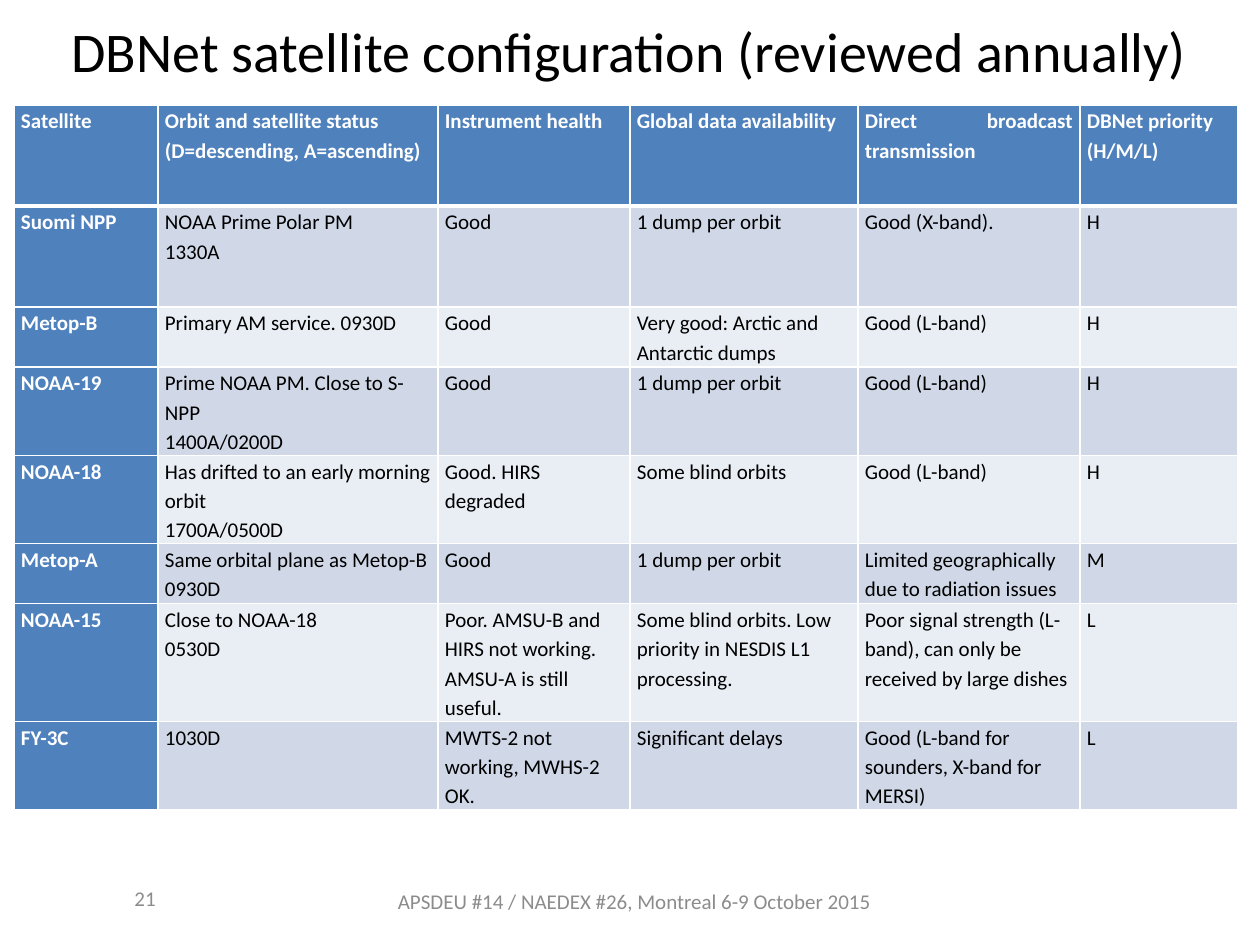
"""Build the DBNet satellite configuration slide."""
from dataclasses import dataclass
from typing import Any, NamedTuple

from lxml.etree import SubElement
from pptx import Presentation
from pptx.dml.color import RGBColor as RGB
from pptx.enum.text import MSO_ANCHOR as Anchor, PP_ALIGN as Align
from pptx.oxml.ns import qn
from pptx.util import Emu, Pt

SCALE = 914400 / 126


@dataclass(frozen=True)
class Theme:
    """Colours, font and type sizes of the slide."""
    font: str = "Calibri"
    title_size: int = 32
    text_size: int = 12
    spacing: float = 1.15
    black: str = "000000"
    white: str = "FFFFFF"
    grey: str = "8C8C8C"
    blue: str = "4F81BD"
    bands: tuple[str, str] = ("D0D8E8", "E9EDF4")


class Box(NamedTuple):
    """Position and size in px."""
    left: int
    top: int
    width: int
    height: int


class Label(NamedTuple):
    """A footer text."""
    text: str
    box: Box
    align: Align


THEME = Theme()
TITLE = "DBNet satellite configuration (reviewed annually)"
TITLE_BOX = Box(55, 5, 1149, 91)
TABLE_BOX = Box(14, 105, 1224, 625)
COLS = (144, 280, 192, 228, 222, 158)
ROW_HEIGHTS = (101, 101, 60, 81, 60, 60, 101, 60)
LEFT_HEADER = 3
ROWS = (
    ("Satellite", "Orbit and satellite status\n(D=descending, A=ascending)",
     "Instrument health", "Global data availability",
     "Direct broadcast transmission", "DBNet priority\n(H/M/L)"),
    ("Suomi NPP", "NOAA Prime Polar PM\n1330A", "Good", "1 dump per orbit",
     "Good (X-band).", "H"),
    ("Metop-B", "Primary AM service. 0930D", "Good",
     "Very good: Arctic and Antarctic dumps", "Good (L-band)", "H"),
    ("NOAA-19", "Prime NOAA PM. Close to S-NPP\n1400A/0200D", "Good",
     "1 dump per orbit", "Good (L-band)", "H"),
    ("NOAA-18", "Has drifted to an early morning orbit\n1700A/0500D",
     "Good. HIRS degraded", "Some blind orbits", "Good (L-band)", "H"),
    ("Metop-A", "Same orbital plane as Metop-B\n0930D", "Good",
     "1 dump per orbit", "Limited geographically due to radiation issues", "M"),
    ("NOAA-15", "Close to NOAA-18\n0530D",
     "Poor. AMSU-B and HIRS not working. AMSU-A is still useful.",
     "Some blind orbits. Low priority in NESDIS L1 processing.",
     "Poor signal strength (L-band), can only be received by large dishes", "L"),
    ("FY-3C", "1030D", "MWTS-2 not working, MWHS-2 OK.", "Significant delays",
     "Good (L-band for sounders, X-band for MERSI)", "L"),
)
FOOTERS = (
    Label("APSDEU #14 / NAEDEX #26, Montreal 6-9 October 2015",
          Box(372, 876, 525, 50), Align.CENTER),
    Label("21", Box(62, 873, 106, 50), Align.RIGHT),
)


def px(n: int) -> Emu:
    """Turn px into EMU."""
    return Emu(round(n * SCALE))


def assign(obj: Any, values: dict[str, Any]) -> None:
    """Set attributes from a dict."""
    for name, value in values.items():
        setattr(obj, name, value)


def write(tf: Any, text: str, size: int, color: str, align: Align,
          bold: bool = False, spacing: float | None = None) -> None:
    """Fill a text frame with one paragraph per line."""
    tf.text = text
    for p in tf.paragraphs:
        assign(p, {"alignment": align, "line_spacing": spacing})
        for r in p.runs:
            assign(r.font, {"name": THEME.font, "size": Pt(size), "bold": bold})
            r.font.color.rgb = RGB.from_string(color)


def add_borders(cell: Any, top: int, bottom: int) -> None:
    """Draw white cell borders with widths in points."""
    pr = cell._tc.get_or_add_tcPr()
    for side, width in {"L": 1, "R": 1, "T": top, "B": bottom}.items():
        ln = SubElement(pr, qn(f"a:ln{side}"), w=str(Pt(width)))
        SubElement(SubElement(ln, qn("a:solidFill")), qn("a:srgbClr"), val=THEME.white)


def format_cell(cell: Any, text: str, row: int, col: int) -> None:
    """Write and colour one table cell by its place in the grid."""
    head = row == 0 or col == 0
    align = Align.JUSTIFY if row == 0 and col != LEFT_HEADER else Align.LEFT
    assign(cell, {"margin_left": px(7), "margin_right": px(7),
                  "margin_top": 0, "margin_bottom": 0})
    write(cell.text_frame, text, THEME.text_size,
          THEME.white if head else THEME.black, align, head, THEME.spacing)
    add_borders(cell, 3 if row == 1 else 1, 3 if row == 0 else 1)
    cell.fill.solid()
    cell.fill.fore_color.rgb = RGB.from_string(
        THEME.blue if head else THEME.bands[(row - 1) % 2])


def add_title(s: Any) -> None:
    """Place the title."""
    sp = s.shapes.title
    assign(sp, {k: px(v) for k, v in TITLE_BOX._asdict().items()})
    write(sp.text_frame, TITLE, THEME.title_size, THEME.black, Align.CENTER)
    sp.text_frame.vertical_anchor = Anchor.MIDDLE


def add_satellites(s: Any) -> None:
    """Add the satellite table."""
    table = s.shapes.add_table(len(ROWS), len(COLS), *map(px, TABLE_BOX)).table
    for column, width in zip(table.columns, COLS):
        column.width = px(width)
    for i, (texts, height) in enumerate(zip(ROWS, ROW_HEIGHTS)):
        table.rows[i].height = px(height)
        for j, text in enumerate(texts):
            format_cell(table.cell(i, j), text, i, j)


def add_footer(s: Any, label: Label) -> None:
    """Add one footer text box."""
    tf = s.shapes.add_textbox(*map(px, label.box)).text_frame
    assign(tf, {"word_wrap": True, "vertical_anchor": Anchor.MIDDLE})
    write(tf, label.text, THEME.text_size, THEME.grey, label.align)


def main() -> None:
    """Build and save the slide."""
    prs = Presentation()
    assign(prs, {"slide_width": px(1260), "slide_height": px(945)})
    s = prs.slides.add_slide(prs.slide_layouts[5])
    add_title(s)
    add_satellites(s)
    for label in FOOTERS:
        add_footer(s, label)
    prs.save("out.pptx")


if __name__ == "__main__":
    main()
